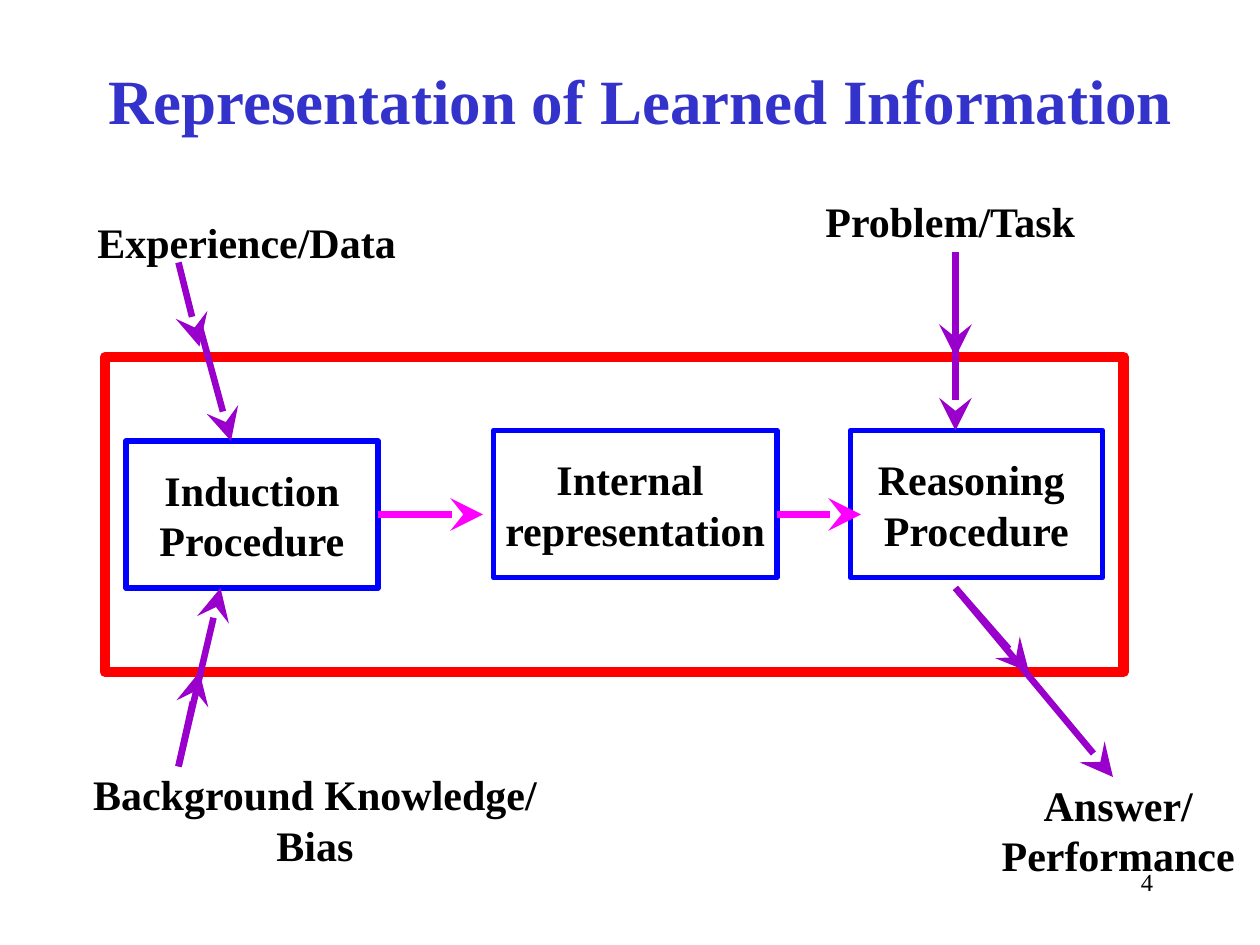
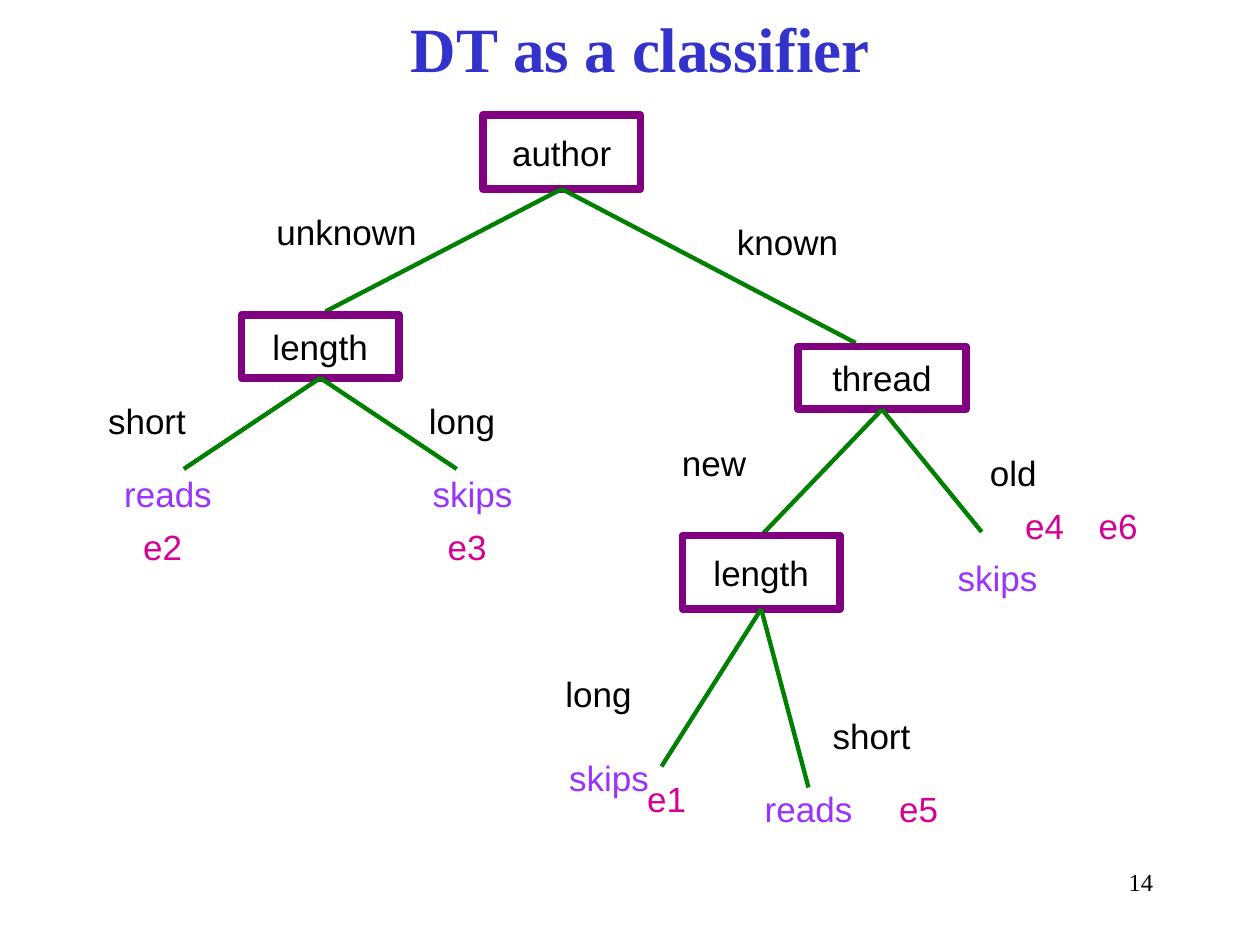
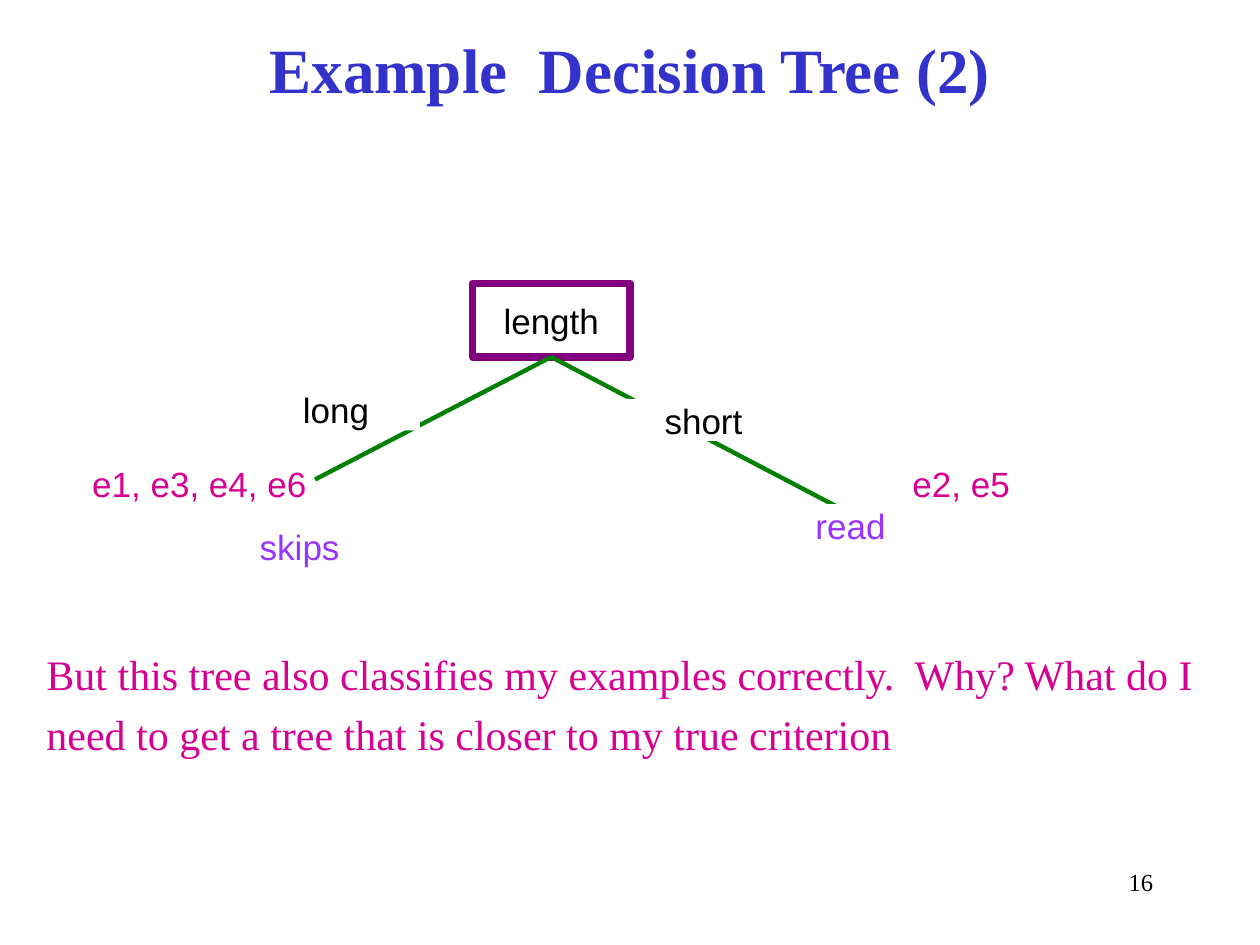
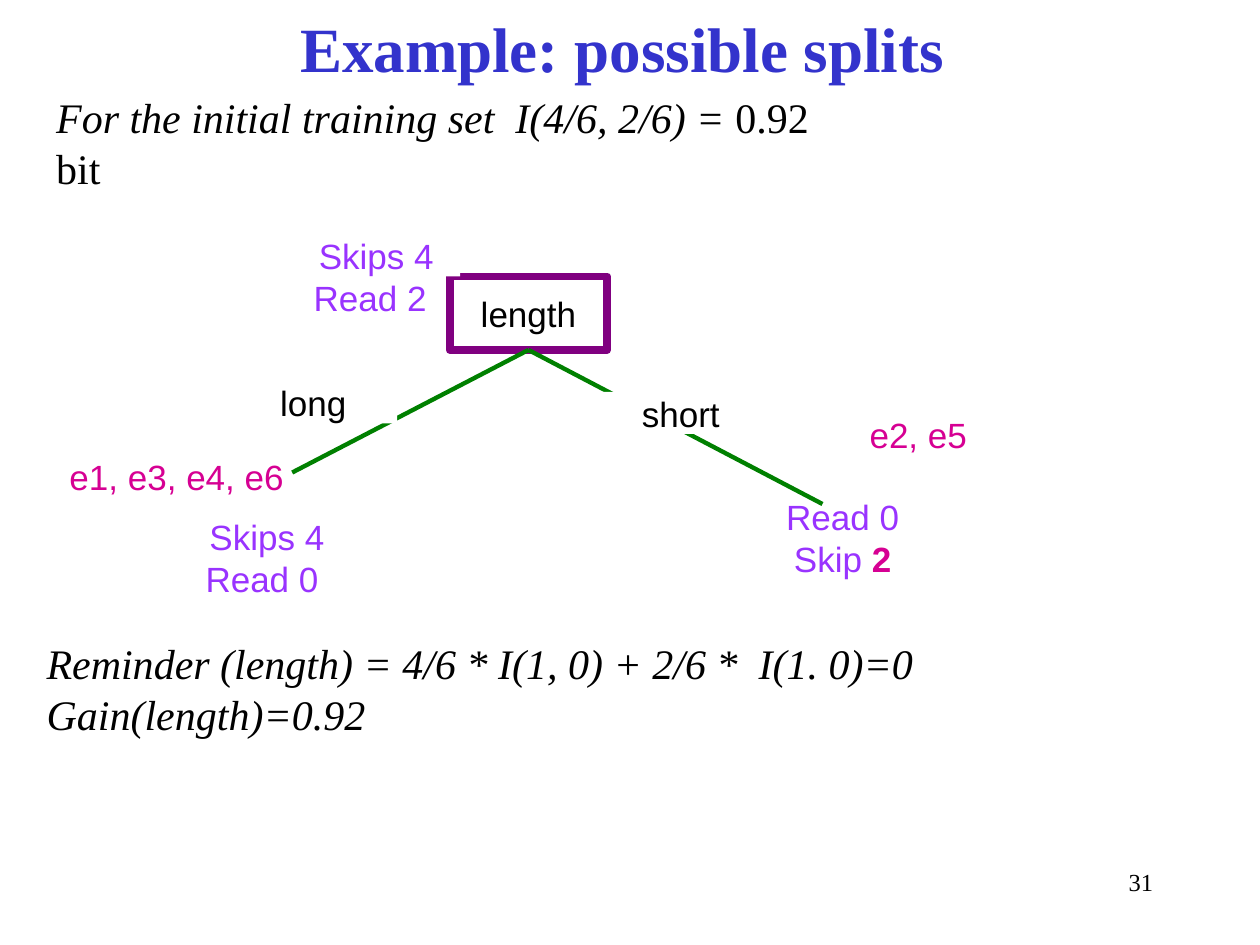
from lxml.etree import SubElement
from pptx import Presentation
from pptx.dml.color import RGBColor
from pptx.enum.shapes import MSO_CONNECTOR, MSO_SHAPE
from pptx.enum.text import MSO_ANCHOR as Anchor, MSO_AUTO_SIZE, PP_ALIGN as Align
from pptx.oxml.ns import qn
from pptx.util import Pt

BLACK = RGBColor(0x00, 0x00, 0x00)
WHITE = RGBColor(0xFF, 0xFF, 0xFF)
TITLE_BLUE = RGBColor(0x33, 0x33, 0xCC)
BOX_BLUE = RGBColor(0x00, 0x00, 0xFF)
RED = RGBColor(0xFF, 0x00, 0x00)
MAGENTA = RGBColor(0xFF, 0x00, 0xFF)
ARROW_PURPLE = RGBColor(0x99, 0x00, 0xCC)
NODE_PURPLE = RGBColor(0x80, 0x00, 0x80)
BRANCH_GREEN = RGBColor(0x00, 0x80, 0x00)
CLASS_VIOLET = RGBColor(0x99, 0x33, 0xFF)
EXAMPLE_PINK = RGBColor(0xD6, 0x00, 0x93)
SERIF, SANS = "Times New Roman", "Arial"
LABEL_HEIGHT = 24


def add_label(slide, box, lines, color=BLACK, font=SANS, size=20, bold=False, italic=False,
              fill=None, border=None, border_width=4.5, align=Align.CENTER,
              anchor=Anchor.MIDDLE, wrap=False):
    """Place text in box (left, top, width, height), as a rectangle if filled or bordered."""
    place = [Pt(length) for length in box]
    if fill is None and border is None:
        label = slide.shapes.add_textbox(*place)
    else:
        label = slide.shapes.add_shape(MSO_SHAPE.RECTANGLE, *place)
        label.shadow.inherit = False
        if fill is None:
            label.fill.background()
        else:
            label.fill.solid()
            label.fill.fore_color.rgb = fill
        if border is None:
            label.line.fill.background()
        else:
            label.line.color.rgb = border
            label.line.width = Pt(border_width)
    frame = label.text_frame
    frame.word_wrap = wrap
    frame.vertical_anchor = anchor
    for index, line in enumerate(lines):
        paragraph = frame.add_paragraph() if index else frame.paragraphs[0]
        if line:
            paragraph.add_run().text = line
        paragraph.alignment = align
        paragraph.font.name = font
        paragraph.font.size = Pt(size)
        paragraph.font.bold = bold
        paragraph.font.italic = italic
        paragraph.font.color.rgb = color
    return label


def add_line(slide, start, end, color, width, arrow=False):
    line = slide.shapes.add_connector(MSO_CONNECTOR.STRAIGHT, *map(Pt, start + end))
    line.line.color.rgb = color
    line.line.width = Pt(width)
    properties = line._element.spPr
    if arrow:
        SubElement(properties.find(qn("a:ln")), qn("a:tailEnd"), type="stealth", w="lg", len="lg")
    SubElement(properties, qn("a:effectLst"))
    return line


prs = Presentation()
prs.slide_width, prs.slide_height = Pt(720), Pt(540)

# Titles and page numbers
slides = []
for heading, left, top, page in [
    ("Representation of Learned Information", 30, 30, 4),
    ("DT as a classifier", 30, 0, 14),
    ("Example  Decision Tree (2)", 24, 12, 16),
    ("Example: possible splits", 19.5, 0, 31),
]:
    slide = prs.slides.add_slide(prs.slide_layouts[5])
    title = slide.shapes.title
    title.left, title.top, title.width, title.height = Pt(left), Pt(top), Pt(672), Pt(54)
    title.text_frame.text = heading
    title.text_frame.auto_size = MSO_AUTO_SIZE.NONE
    title.text_frame.vertical_anchor = Anchor.MIDDLE
    paragraph = title.text_frame.paragraphs[0]
    paragraph.alignment = Align.CENTER
    paragraph.font.name, paragraph.font.size, paragraph.font.bold = SERIF, Pt(36), True
    paragraph.font.color.rgb = TITLE_BLUE
    add_label(slide, (516, 492, 150, 36), [str(page)], font=SERIF, size=14,
              align=Align.RIGHT, anchor=Anchor.TOP, wrap=True)
    slides.append(slide)
learning, classifier, short_tree, splits = slides

# Learning system: frame, procedures, inputs and outputs
add_label(learning, (60, 204, 582, 180), [], fill=WHITE, border=RED, border_width=6)
procedures = []
for left, top, width, lines in [
    (72, 252, 144, ["Induction", "Procedure"]),
    (486, 246, 144, ["Reasoning ", "Procedure"]),
    (282, 246, 162, ["Internal ", "representation"]),
]:
    procedures.append(add_label(learning, (left, top, width, 84), lines, font=SERIF, size=24,
                                bold=True, fill=WHITE, border=BOX_BLUE, border_width=3.25))
for left, top, width, lines in [
    (0, 426, 360, ["Background Knowledge/", "Bias"]),
    (462, 84, 162, ["Problem/Task"]),
    (558, 432, 162, ["Answer/", "Performance"]),
    (0, 96, 282, ["Experience/Data"]),
]:
    add_label(learning, (left, top, width, 84), lines, font=SERIF, size=24, bold=True)

# Flow between and around the procedures
for start, end in [
    ((102, 438), (126, 336)),
    ((546, 336), (636, 444)),
    ((546, 150), (546, 246)),
    ((102, 438), (114, 384)),
    ((546, 144), (546, 204)),
    ((546, 336), (588, 384)),
    ((102, 150), (114, 198)),
    ((114, 186), (132, 252)),
]:
    add_line(learning, start, end, ARROW_PURPLE, 3.75, arrow=True)
add_line(learning, (444, 294), (492, 294), MAGENTA, 3.75, arrow=True)
induced = add_line(learning, (216, 294), (276, 294), MAGENTA, 3.75, arrow=True)
induced.begin_connect(procedures[0], 3)

# Classifier tree: each node with the ends of its branches
tests = []
for test, box, branch_ends in [
    ("author", (276, 66, 90, 42), [(186, 178), (489, 196)]),
    ("length", (138, 180, 90, 36), [(105, 268), (261, 268)]),
    ("thread", (456, 198, 96, 36), [(561, 304), (435, 304)]),
    ("length", (390, 306, 90, 42), [(462, 450), (378, 438)]),
]:
    node = add_label(classifier, box, [test], border=NODE_PURPLE)
    left, top, width, height = box
    branches = []
    for end in branch_ends:
        branch = add_line(classifier, (left + width / 2, top + height), end, BRANCH_GREEN, 2.5)
        branch.begin_connect(node, 0 + 2)
        branches.append(branch)
    tests.append((node, branches))
thread_branches = tests[2][1]
thread_branches[1].end_connect(tests[3][0], 0)

# Classifier tree: branch values, classes and examples
for color, width, labels in [
    (BLACK, 96, [("unknown", 150, 120), ("short", 36, 228), ("long", 216, 228),
                 ("known", 402, 126), ("new", 360, 252), ("old", 531, 258),
                 ("short", 450, 408), ("long", 294, 384)]),
    (CLASS_VIOLET, 96, [("skips", 222, 270), ("reads", 48, 270), ("skips", 522, 318),
                        ("reads", 414, 450), ("skips", 300, 432)]),
    (EXAMPLE_PINK, 78, [("e2", 54, 300), ("e3", 228, 300), ("e4", 558, 288),
                        ("e1", 342, 444), ("e5", 486, 450), ("e6", 600, 288)]),
]:
    for text, left, top in labels:
        add_label(classifier, (left, top, width, LABEL_HEIGHT), [text], color)

# Split on length, on two slides with a small shift
for slide, dx, dy in [(short_tree, 0, 0), (splits, -13, -4)]:
    node = add_label(slide, (270 + dx, 162 + dy, 90, 42), ["length"], border=NODE_PURPLE)
    for end in [(180, 274), (483, 292)]:
        branch = add_line(slide, (315 + dx, 204 + dy), (end[0] + dx, end[1] + dy),
                          BRANCH_GREEN, 2.5)
        branch.begin_connect(node, 2)
    for text, left, top, color in [
        ("long", 144, 222, BLACK),
        ("short", 354, 228, BLACK),
        ("e1, e3, e4, e6", 66, 264, EXAMPLE_PINK),
    ]:
        add_label(slide, (left + dx, top + dy, 96, LABEL_HEIGHT), [text], color, fill=WHITE)

# Outcomes of the split
for slide, left, top, width, lines, color in [
    (short_tree, 126, 300, 96, ["skips "], CLASS_VIOLET),
    (short_tree, 438, 288, 96, ["read"], CLASS_VIOLET),
    (short_tree, 504, 264, 96, ["e2, e5 "], EXAMPLE_PINK),
    (splits, 104.5, 306.5, 96, ["Skips 4", "Read 0 "], CLASS_VIOLET),
    (splits, 479.5, 236, 96, ["e2, e5 "], EXAMPLE_PINK),
    (splits, 167, 134, 96, ["Skips 4"], CLASS_VIOLET),
    (splits, 172, 158, 79, ["Read 2"], CLASS_VIOLET),
]:
    add_label(slide, (left, top, width, LABEL_HEIGHT), lines, color, fill=WHITE)
short_outcome = add_label(splits, (433.5, 295, 96, LABEL_HEIGHT), ["Read 0", "Skip "],
                          CLASS_VIOLET, fill=WHITE)
skip_count = short_outcome.text_frame.paragraphs[1].add_run()
skip_count.text = "2"
skip_count.font.bold = True
skip_count.font.color.rgb = EXAMPLE_PINK

# Question and calculations
prose = dict(font=SERIF, size=24, align=Align.LEFT, anchor=Anchor.TOP, wrap=True)
question = add_label(
    short_tree, (19.5, 361, 670, 76),
    ["But this tree also classifies my examples correctly.  Why? "
     "What do I need to get a tree that is closer to my true criterion"],
    EXAMPLE_PINK, **prose)
question.text_frame.paragraphs[0].line_spacing = 1.2
information = add_label(splits, (25, 49, 475, 66),
                        ["For the initial training set  I(4/6, 2/6) = "], italic=True, **prose)
bits = information.text_frame.paragraphs[0].add_run()
bits.text = "0.92 bit"
bits.font.italic = False
add_label(splits, (19.5, 361, 550, 94),
          ["Reminder (length) = 4/6 * I(1, 0) + 2/6 *  I(1. 0)=0", "Gain(length)=0.92"],
          italic=True, **prose)

prs.save("out.pptx")
